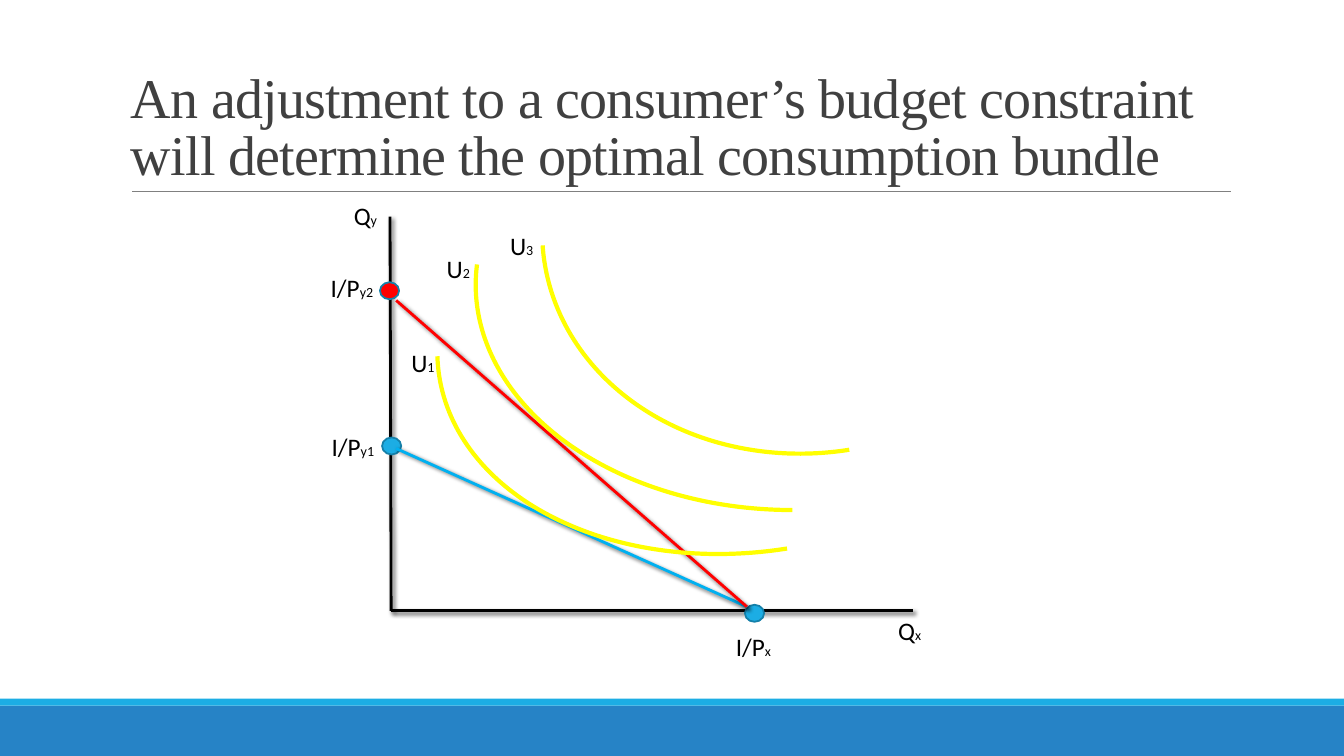
from dataclasses import dataclass

from lxml import etree
from pptx import Presentation
from pptx import util as u
from pptx.dml.color import RGBColor
from pptx.enum import shapes, text
from pptx.oxml import parse_xml
from pptx.oxml.ns import nsdecls, qn


@dataclass(frozen=True)
class Theme:
    title_font: str = "Times New Roman"
    label_font: str = "Calibri"
    title_size: float = 40
    label_size: float = 18
    subscript_size: float = 10
    title: str = "404040"
    rule: str = "808080"
    ink: str = "000000"
    footer: str = "2683C6"
    accent: str = "1CADE4"
    dot_outline: str = "1580A9"
    old_budget: str = "00B0F0"
    new_budget: str = "FF0000"
    utility: str = "FFFF00"


THEME = Theme()
WIDTH, HEIGHT = 960, 540
SHADOW = (
    f'<a:effectLst {nsdecls("a")}><a:outerShdw blurRad="38100" dist="25400" dir="2700000">'
    '<a:srgbClr val="000000"><a:alpha val="60000"/></a:srgbClr>'
    '</a:outerShdw></a:effectLst>'
)


def points(*lengths):
    return [u.Pt(length) for length in lengths]


def color(value):
    return RGBColor.from_string(value)


def add_solid(slide, kind, box, fill, outline=None):
    shape = slide.shapes.add_shape(kind, *points(*box))
    shape.shadow.inherit = False
    shape.fill.solid()
    shape.fill.fore_color.rgb = color(fill)
    if outline:
        shape.line.color.rgb = color(outline)
        shape.line.width = u.Pt(1.25)
    else:
        shape.line.fill.background()


def add_line(slide, start, end, line_color, weight, shadow=False):
    line = slide.shapes.add_connector(
        shapes.MSO_CONNECTOR.STRAIGHT, *points(*start, *end))
    line.line.color.rgb = color(line_color)
    line.line.width = u.Pt(weight)
    properties = line._element.spPr
    if shadow:
        properties.append(parse_xml(SHADOW))
    else:
        etree.SubElement(properties, qn("a:effectLst"))


def format_run(run, font, size, run_color):
    run.font.name = font
    run.font.size = u.Pt(size)
    run.font.color.rgb = color(run_color)


def add_label(slide, left, top, symbol, subscript):
    """Place a symbol with a smaller index; left is where the letters start."""
    frame = slide.shapes.add_textbox(*points(left, top, 60, 29)).text_frame
    frame.word_wrap = True
    frame.margin_left = frame.margin_right = 0
    paragraph = frame.paragraphs[0]
    for content, size in ((symbol, THEME.label_size), (subscript, THEME.subscript_size)):
        run = paragraph.add_run()
        run.text = content
        format_run(run, THEME.label_font, size, THEME.ink)


def add_curve(slide, left, top, width, height, rotation):
    """Draw an indifference curve as a turned quarter ellipse."""
    curve = slide.shapes.add_shape(
        shapes.MSO_SHAPE.ARC, *points(left, top, width, height))
    curve.adjustments[0] = 162
    curve.adjustments[1] = 2.216
    curve.rotation = rotation
    curve.shadow.inherit = False
    curve.fill.background()
    curve.line.color.rgb = color(THEME.utility)
    curve.line.width = u.Pt(3)


def add_footer(slide, top):
    bar = shapes.MSO_SHAPE.RECTANGLE
    add_solid(slide, bar, (0, top + 5, WIDTH, HEIGHT - top - 5), THEME.footer)
    add_solid(slide, bar, (0, top, WIDTH, 5), THEME.accent)


def add_title(slide, left, top, width, height):
    bottom = top + height
    add_line(slide, (left + 8, bottom), (left + width + 0.7, bottom), THEME.rule, 0.5)
    frame = slide.shapes.add_textbox(*points(left, top, width, height)).text_frame
    frame.word_wrap = True
    frame.vertical_anchor = text.MSO_ANCHOR.BOTTOM
    frame.text = ("An adjustment to a consumer’s budget constraint "
                  "will determine the optimal consumption bundle")
    paragraph = frame.paragraphs[0]
    paragraph.line_spacing = 0.85
    run = paragraph.runs[0]
    format_run(run, THEME.title_font, THEME.title_size, THEME.title)
    run.font._element.set("spc", "-50")


def add_diagram(slide, left, top):
    """Draw axes, budget lines and indifference curves from the given corner."""
    def at(x, y):
        return left + x, top + y

    origin = at(59.4, 306.3)
    for end in (at(58.6, 24.8), at(432.3, 306.3)):
        add_line(slide, end, origin, THEME.ink, 2, shadow=True)

    for x, y, fill in ((51.4, 71.6, THEME.new_budget),
                       (52.9, 182.5, THEME.accent),
                       (312.1, 302, THEME.accent)):
        add_solid(slide, shapes.MSO_SHAPE.OVAL, (*at(x, y), 13.7, 12.2),
                  fill, THEME.dot_outline)

    for y, line_color in ((190.4, THEME.old_budget), (84.6, THEME.new_budget)):
        add_line(slide, at(63, y), at(313.5, 303.4), line_color, 2, shadow=True)

    for x, y, width, height, rotation in ((91, -56.6, 452.2, 320.4, 171),
                                          (119.8, -87.5, 452.2, 321.8, 180),
                                          (166.6, -138.6, 388.1, 331.9, 171)):
        add_curve(slide, *at(x, y), width, height, rotation)

    for x, y, symbol, subscript in ((32.7, 9.7, "Q", "y"),
                                    (421.5, 306.3, "Q", "x"),
                                    (16.2, 60.8, "I/P", "y2"),
                                    (16.9, 174.6, "I/P", "y1"),
                                    (305.6, 317.1, "I/P", "x"),
                                    (73.8, 114.8, "U", "1"),
                                    (99, 47.1, "U", "2"),
                                    (144.3, 30.6, "U", "3")):
        add_label(slide, *at(x, y), symbol, subscript)


def main():
    presentation = Presentation()
    presentation.slide_width, presentation.slide_height = points(WIDTH, HEIGHT)
    slide = presentation.slides.add_slide(presentation.slide_layouts[6])
    add_footer(slide, top=499)
    add_title(slide, left=86.4, top=22.3, width=792, height=114.5)
    add_diagram(slide, left=220, top=130)
    presentation.save("out.pptx")


if __name__ == "__main__":
    main()
